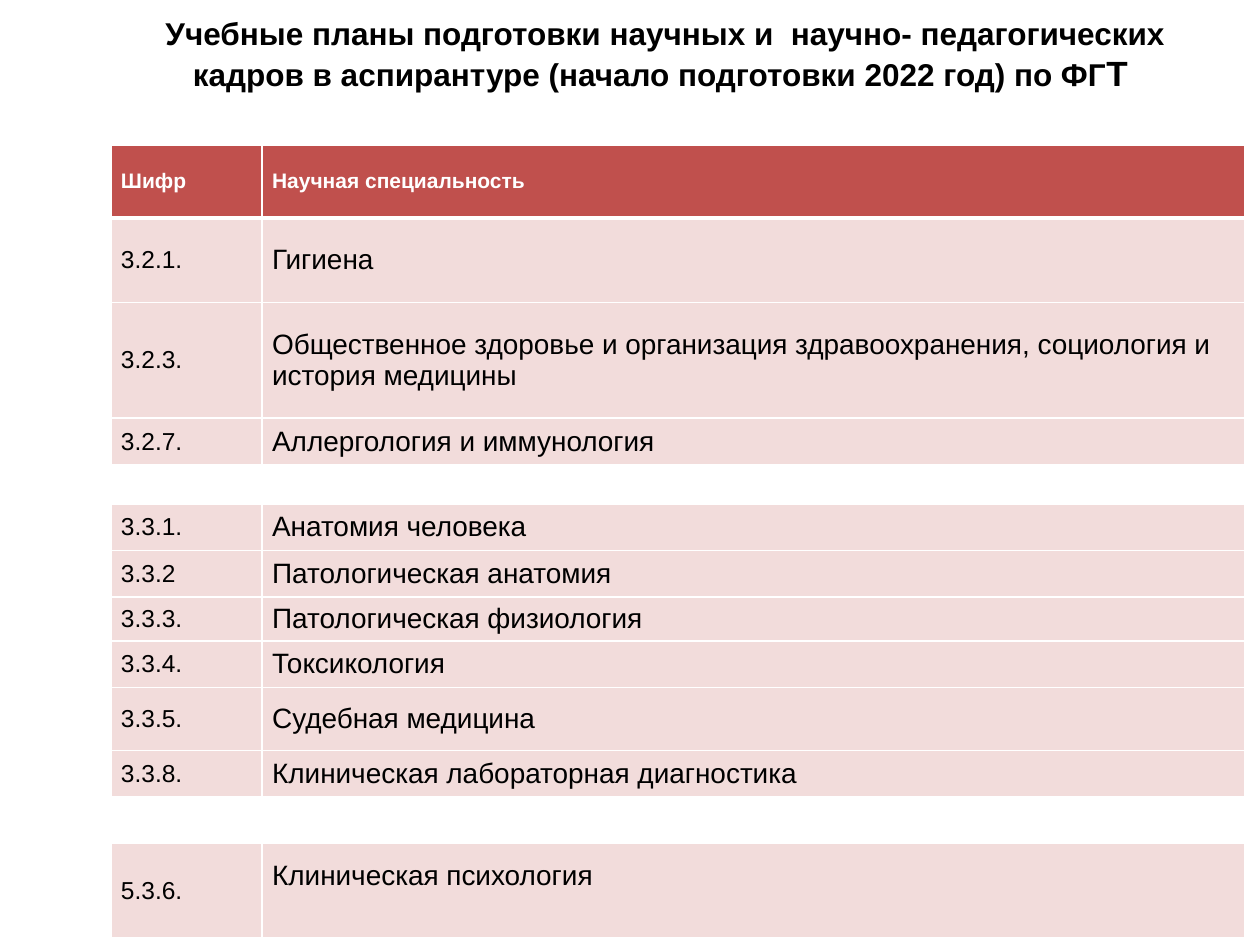
from pptx import Presentation
from pptx import util as u
from pptx.dml.color import RGBColor
from pptx.enum import text
from pptx.oxml import parse_xml
from pptx.oxml.ns import nsdecls

THEME = {
    "font": "Arial",
    "ink": RGBColor.from_string("000000"),
    "paper": RGBColor.from_string("FFFFFF"),
    "header": RGBColor.from_string("C0504D"),
    "band": RGBColor.from_string("F2DCDB"),
    "title_size": 18, "title_end_size": 20,
    "header_size": 12, "code_size": 14, "name_size": 16,
    "rule": 1, "header_rule": 3,
}
HEADING = ("Шифр", "Научная специальность")
GAP = None
ROWS = [
    (0.58, HEADING),
    (0.67, ("3.2.1.", "Гигиена")),
    (0.92, ("3.2.3.", "Общественное здоровье и организация здравоохранения, социология и история медицины")),
    (0.37, ("3.2.7.", "Аллергология и иммунология")),
    (0.31, GAP),
    (0.37, ("3.3.1.", "Анатомия человека")),
    (0.37, ("3.3.2", "Патологическая анатомия")),
    (0.33, ("3.3.3.", "Патологическая физиология")),
    (0.37, ("3.3.4.", "Токсикология")),
    (0.5, ("3.3.5.", "Судебная медицина")),
    (0.37, ("3.3.8.", "Клиническая лабораторная диагностика")),
    (0.37, GAP),
    (0.75, ("5.3.6.", "Клиническая психология")),
]


def add_run(paragraph, wording, size, color, bold):
    run = paragraph.add_run()
    run.text = wording
    run.font.color.rgb = color
    for key, value in {"name": THEME["font"], "size": u.Pt(size), "bold": bold}.items():
        setattr(run.font, key, value)


def set_borders(cell, bottom):
    properties = cell._tc.get_or_add_tcPr()
    widths = dict.fromkeys(("lnL", "lnR", "lnT"), THEME["rule"]) | {"lnB": bottom}
    for place, (side, width) in enumerate(widths.items()):
        properties.insert(place, parse_xml(
            f'<a:{side} {nsdecls("a")} w="{u.Pt(width)}"><a:solidFill>'
            f'<a:srgbClr val="{THEME["paper"]}"/></a:solidFill></a:{side}>'))


deck = Presentation()
deck.slide_width, deck.slide_height = u.Inches(10), u.Inches(7.5)
slide = deck.slides.add_slide(deck.slide_layouts[5])

title = slide.shapes.title
for key, value in {"left": 0.75, "top": 0, "width": 9.06, "height": 0.85}.items():
    setattr(title, key, u.Inches(value))
for key, value in {"word_wrap": True, "auto_size": text.MSO_AUTO_SIZE.NONE,
                   "vertical_anchor": text.MSO_ANCHOR.MIDDLE}.items():
    setattr(title.text_frame, key, value)
heading = title.text_frame.paragraphs[0]
heading.alignment = text.PP_ALIGN.CENTER
add_run(heading, "Учебные планы подготовки научных и  научно- педагогических "
        "кадров в аспирантуре (начало подготовки 2022 год) по ФГ",
        THEME["title_size"], THEME["ink"], True)
add_run(heading, "Т ", THEME["title_end_size"], THEME["ink"], True)

column_widths = [u.Inches(1.2), u.Inches(7.8)]
specialties = slide.shapes.add_table(
    len(ROWS), len(column_widths), u.Inches(0.88), u.Inches(1.15),
    sum(column_widths), u.Inches(sum(height for height, _ in ROWS))).table
for column, width in zip(specialties.columns, column_widths):
    column.width = width

for row, (height, entry) in zip(specialties.rows, ROWS):
    row.height = u.Inches(height)
    is_header = entry is HEADING
    fill = THEME["header"] if is_header else THEME["band"] if entry else THEME["paper"]
    for cell in row.cells:
        cell.fill.solid()
        cell.fill.fore_color.rgb = fill
        set_borders(cell, THEME["header_rule"] if is_header else THEME["rule"])
        side, edge = (0.08, 0.05) if entry else (0, 0)
        for key, value in {"margin_left": u.Inches(side), "margin_right": u.Inches(side),
                           "margin_top": u.Inches(edge), "margin_bottom": u.Inches(edge),
                           "vertical_anchor": text.MSO_ANCHOR.MIDDLE}.items():
            setattr(cell, key, value)
    if entry is GAP:
        row.cells[0].merge(row.cells[1])
        continue
    sizes = [THEME["header_size"]] * 2 if is_header else [THEME["code_size"], THEME["name_size"]]
    color = THEME["paper"] if is_header else THEME["ink"]
    for cell, wording, size in zip(row.cells, entry, sizes):
        add_run(cell.text_frame.paragraphs[0], wording, size, color, is_header)

specialties.cell(len(ROWS) - 1, 1).margin_bottom = u.Inches(0.29)

deck.save("out.pptx")
